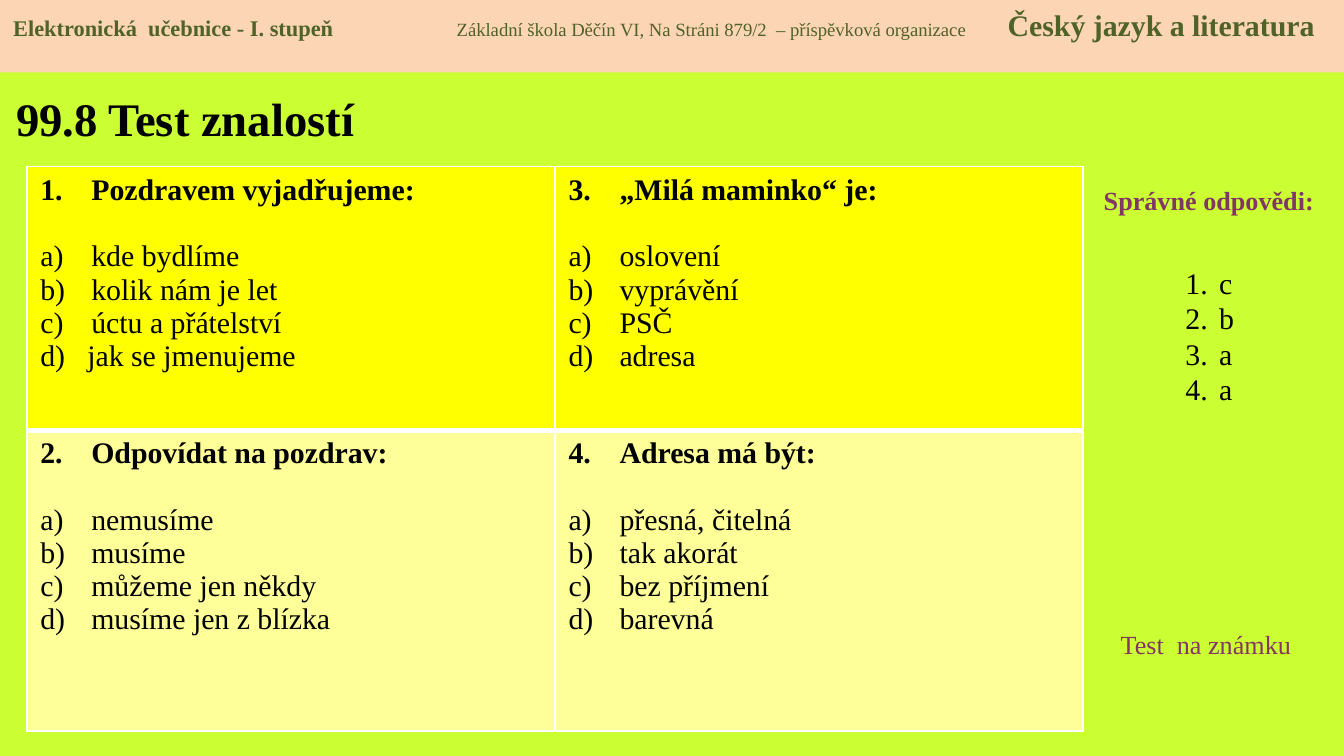
from dataclasses import dataclass

from pptx import Presentation
from pptx.dml.color import RGBColor
from pptx.enum.shapes import MSO_SHAPE
from pptx.enum.text import MSO_ANCHOR, MSO_AUTO_SIZE, PP_ALIGN
from pptx.oxml.xmlchemy import OxmlElement
from pptx.util import Inches, Pt


@dataclass(frozen=True)
class Theme:
    font: str = "Times New Roman"
    page: str = "CCFF33"
    banner: str = "FCD5B5"
    banner_text: str = "4F6228"
    text: str = "000000"
    accent: str = "813763"
    border: str = "FFFFFF"
    row_fills: tuple = ("FFFF00", "FFFF99")
    title_size: int = 25
    body_size: int = 16
    label_size: int = 14
    subject_size: int = 16
    book_size: int = 12
    school_size: int = 10


THEME = Theme()

BANNER = [
    ("Elektronická  učebnice - I. stupeň", THEME.book_size, True),
    ("\tZákladní škola Děčín VI, Na Stráni 879/2  – příspěvková organizace",
     THEME.school_size, False),
    ("\tČeský jazyk a literatura", THEME.subject_size, True),
]
BANNER_TABS = (3.3, 7.4)

# Questions run down each column of the table.
# An answer with a tab carries its own typed letter.
QUESTIONS = [
    ("Pozdravem vyjadřujeme:",
     ["kde bydlíme", "kolik nám je let", "úctu a přátelství", "d)\tjak se jmenujeme"]),
    ("Odpovídat na pozdrav:",
     ["nemusíme", "musíme", "můžeme jen někdy", "musíme jen z blízka"]),
    ("„Milá maminko“ je:", ["oslovení", "vyprávění", "PSČ", "adresa"]),
    ("Adresa má být:", ["přesná, čitelná", "tak akorát", "bez příjmení", "barevná"]),
]
CORRECT_ANSWERS = ["c", "b", "a", "a"]
ROW_HEIGHTS = (1.96, 2.24)
COLUMN_WIDTH = 3.93
THIN, THICK = 1, 3


def rgb(value):
    return RGBColor.from_string(value)


def style_font(target, size, color=THEME.text, bold=False):
    values = {"name": THEME.font, "size": Pt(size), "bold": bold}
    for name, value in values.items():
        setattr(target.font, name, value)
    target.font.color.rgb = rgb(color)


def place(shape, left, top, width, height):
    bounds = {"left": left, "top": top, "width": width, "height": height}
    for name, value in bounds.items():
        setattr(shape, name, Inches(value))


def add_child(parent, tag, **attributes):
    child = OxmlElement(tag)
    for name, value in attributes.items():
        child.set(name, str(value))
    parent.append(child)
    return child


def hang_paragraph(para, indent):
    properties = para._p.get_or_add_pPr()
    properties.set("marL", str(Inches(indent)))
    properties.set("indent", str(-Inches(indent)))
    return properties


def number_paragraph(para, scheme, indent, start=1):
    """Give the paragraph an automatic number and a hanging indent."""
    properties = hang_paragraph(para, indent)
    add_child(properties, "a:buFont", typeface=THEME.font)
    add_child(properties, "a:buAutoNum", type=scheme, startAt=start)


def next_paragraph(frame, index):
    return frame.paragraphs[0] if index == 0 else frame.add_paragraph()


def add_banner(page):
    banner = page.shapes.add_shape(
        MSO_SHAPE.RECTANGLE, 0, 0, Inches(10), Inches(0.54))
    banner.shadow.inherit = False
    banner.fill.solid()
    banner.fill.fore_color.rgb = rgb(THEME.banner)
    banner.line.fill.background()
    frame = banner.text_frame
    frame.word_wrap = True
    frame.vertical_anchor = MSO_ANCHOR.TOP
    frame.margin_top = Inches(0.05)
    para = frame.paragraphs[0]
    para.alignment = PP_ALIGN.LEFT
    tabs = add_child(para._p.get_or_add_pPr(), "a:tabLst")
    for position in BANNER_TABS:
        add_child(tabs, "a:tab", pos=Inches(position), algn="l")
    for text, size, bold in BANNER:
        span = para.add_run()
        span.text = text
        style_font(span, size, THEME.banner_text, bold)


def fill_title(title, text):
    place(title, 0.02, 0.55, 3.19, 0.65)
    frame = title.text_frame
    frame.text = text
    frame.vertical_anchor = MSO_ANCHOR.MIDDLE
    frame.auto_size = MSO_AUTO_SIZE.NONE
    para = frame.paragraphs[0]
    para.alignment = PP_ALIGN.LEFT
    style_font(para.runs[0], THEME.title_size, bold=True)


def add_label(page, text, bounds, alignment, bold=False):
    box = page.shapes.add_textbox(*map(Inches, bounds))
    frame = box.text_frame
    frame.word_wrap = True
    para = frame.paragraphs[0]
    para.alignment = alignment
    span = para.add_run()
    span.text = text
    style_font(span, THEME.label_size, THEME.accent, bold)


def fill_answer_list(body):
    place(body, 8.72, 1.65, 0.55, 1.99)
    frame = body.text_frame
    frame.auto_size = MSO_AUTO_SIZE.NONE
    frame.vertical_anchor = MSO_ANCHOR.TOP
    frame.margin_top = Inches(0.32)
    for index, answer in enumerate(CORRECT_ANSWERS):
        para = next_paragraph(frame, index)
        para.space_before = Pt(0)
        number_paragraph(para, "arabicPeriod", 0.25)
        para.line_spacing = Pt(19)
        para.text = answer
        style_font(para, THEME.body_size)
        style_font(para.runs[0], THEME.body_size)


def add_cell_borders(cell, top, bottom):
    properties = cell._tc.get_or_add_tcPr()
    widths = {"a:lnL": THIN, "a:lnR": THIN, "a:lnT": top, "a:lnB": bottom}
    for tag, width in widths.items():
        line = add_child(properties, tag, w=Pt(width))
        add_child(add_child(line, "a:solidFill"), "a:srgbClr", val=THEME.border)


def fill_question(cell, number):
    question, answers = QUESTIONS[number - 1]
    for index, text in enumerate([question, *answers]):
        is_question = index == 0
        para = next_paragraph(cell.text_frame, index)
        if index == 1:
            para.space_before = Pt(18)
        if "\t" in text:
            hang_paragraph(para, 0.35)
        else:
            scheme = "arabicPeriod" if is_question else "alphaLcParenR"
            number_paragraph(para, scheme, 0.38, number if is_question else 1)
        para.text = text
        style_font(para, THEME.body_size, bold=is_question)
        style_font(para.runs[0], THEME.body_size, bold=is_question)


def add_question_table(page):
    rows = len(ROW_HEIGHTS)
    columns = len(QUESTIONS) // rows
    table = page.shapes.add_table(
        rows, columns, Inches(0.2), Inches(1.24),
        Inches(columns * COLUMN_WIDTH), Inches(sum(ROW_HEIGHTS))).table
    for row, height in enumerate(ROW_HEIGHTS):
        table.rows[row].height = Inches(height)
        for column in range(columns):
            cell = table.cell(row, column)
            add_cell_borders(cell, THICK if row else THIN, THIN if row else THICK)
            cell.fill.solid()
            cell.fill.fore_color.rgb = rgb(THEME.row_fills[row])
            fill_question(cell, column * rows + row + 1)


def main():
    deck = Presentation()
    deck.slide_width = Inches(10)
    deck.slide_height = deck.slide_width * 9 // 16
    page = deck.slides.add_slide(deck.slide_layouts[1])
    page.background.fill.solid()
    page.background.fill.fore_color.rgb = rgb(THEME.page)
    fill_title(page.shapes.title, "99.8 Test znalostí")
    add_label(page, "Správné odpovědi:", (8.05, 1.32, 1.89, 0.34),
              PP_ALIGN.CENTER, bold=True)
    add_question_table(page)
    fill_answer_list(page.placeholders[1])
    add_label(page, "Test  na známku", (8.24, 4.63, 1.57, 0.34), PP_ALIGN.LEFT)
    add_banner(page)
    deck.save("out.pptx")


if __name__ == "__main__":
    main()
